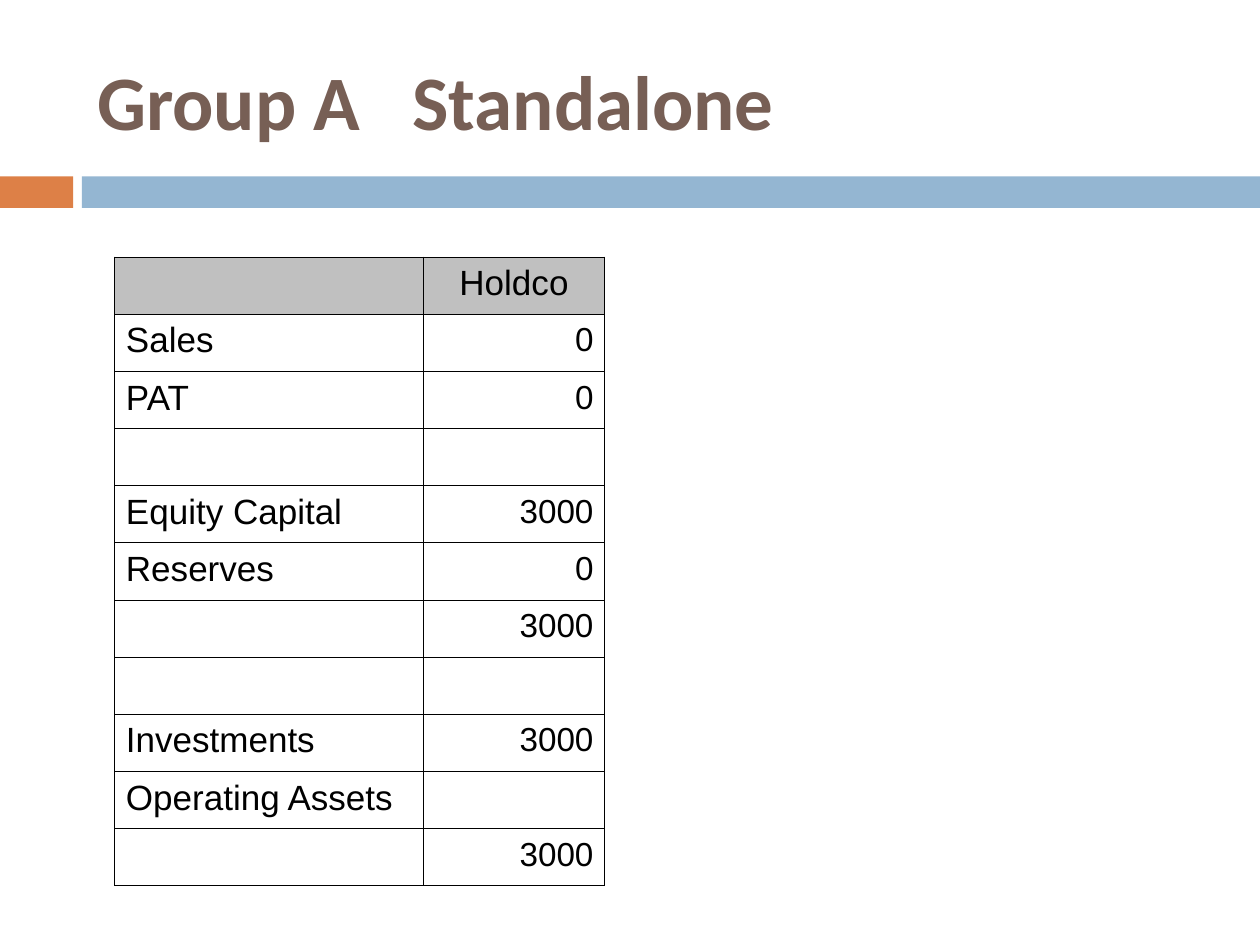
from dataclasses import dataclass

from lxml.etree import SubElement
from pptx import Presentation
from pptx.dml.color import RGBColor as RGB
from pptx.enum.shapes import MSO_SHAPE as Shape
from pptx.enum.text import MSO_ANCHOR as Anchor, MSO_AUTO_SIZE as AutoSize, PP_ALIGN as Align
from pptx.oxml.ns import qn
from pptx.util import Inches, Pt


@dataclass(frozen=True)
class Theme:
    title_font: str = "Calibri"
    table_font: str = "Arial"
    title_size: int = 44
    label_size: int = 20
    figure_size: int = 19
    title: str = "775F55"
    accent: str = "DD8047"
    band: str = "94B6D2"
    header: str = "C0C0C0"
    ink: str = "000000"
    rule: float = 0.57


THEME = Theme()
SLIDE_WIDTH, SLIDE_HEIGHT = 10, 7.5
BAND_TOP, BAND_HEIGHT = 1.4, 0.25
ACCENT_WIDTH, BAND_LEFT = 0.58, 0.65
TABLE_LEFT, TABLE_TOP = 0.91, 2.04
COLUMN_WIDTHS = (2.45, 1.44)
ROW_HEIGHT = 4.99 / 11

ACCOUNTS = [
    ("", "Holdco"),
    ("Sales", "0"),
    ("PAT", "0"),
    ("", ""),
    ("Equity Capital", "3000"),
    ("Reserves", "0"),
    ("", "3000"),
    ("", ""),
    ("Investments", "3000"),
    ("Operating Assets", ""),
    ("", "3000"),
]


def add_run(paragraph, text, font_name, size, color, bold=False):
    run = paragraph.add_run()
    run.text = text
    run.font.name = font_name
    run.font.size = Pt(size)
    run.font.bold = bold
    run.font.color.rgb = RGB.from_string(color)


def add_band(slide, left, width, color):
    band = slide.shapes.add_shape(
        Shape.RECTANGLE, Inches(left), Inches(BAND_TOP), Inches(width), Inches(BAND_HEIGHT))
    band.shadow.inherit = False
    band.fill.solid()
    band.fill.fore_color.rgb = RGB.from_string(color)
    band.line.fill.background()


def set_title(slide, text):
    title = slide.shapes.title
    title.left, title.top, title.width, title.height = map(Inches, (0.67, 0.25, 8.92, 1.08))
    frame = title.text_frame
    frame.auto_size = AutoSize.NONE
    frame.vertical_anchor = Anchor.MIDDLE
    heading = frame.paragraphs[0]
    heading.alignment = Align.LEFT
    add_run(heading, text, THEME.title_font, THEME.title_size, THEME.title, bold=True)


def add_borders(cell):
    """Rule all four sides; must come before the cell's fill in the XML."""
    properties = cell._tc.get_or_add_tcPr()
    for side in ("a:lnL", "a:lnR", "a:lnT", "a:lnB"):
        line = SubElement(properties, qn(side), w=str(Pt(THEME.rule)))
        fill = SubElement(line, qn("a:solidFill"))
        SubElement(fill, qn("a:srgbClr"), val=THEME.ink)


def fill_cell(cell, text, is_header, is_figure):
    add_borders(cell)
    if is_header:
        cell.fill.solid()
        cell.fill.fore_color.rgb = RGB.from_string(THEME.header)
    else:
        cell.fill.background()
    if not text:
        return
    cell.vertical_anchor = Anchor.MIDDLE
    cell.margin_left = cell.margin_right = Inches(0.09)
    cell.margin_top = Inches(0.06 if is_figure else 0.07)
    cell.margin_bottom = Inches(0.05)
    entry = cell.text_frame.paragraphs[0]
    entry.alignment = Align.CENTER if is_header else Align.RIGHT if is_figure else Align.LEFT
    entry.line_spacing = 0.76
    entry.space_after = Pt(14.2)
    size = THEME.figure_size if is_figure else THEME.label_size
    add_run(entry, text, THEME.table_font, size, THEME.ink)


def add_accounts(slide, accounts):
    table = slide.shapes.add_table(
        len(accounts), len(COLUMN_WIDTHS), Inches(TABLE_LEFT), Inches(TABLE_TOP),
        Inches(sum(COLUMN_WIDTHS)), Inches(ROW_HEIGHT * len(accounts))).table
    table.first_row = table.horz_banding = False
    for column, width in zip(table.columns, COLUMN_WIDTHS):
        column.width = Inches(width)
    for r, account in enumerate(accounts):
        table.rows[r].height = Inches(ROW_HEIGHT)
        for c, text in enumerate(account):
            fill_cell(table.cell(r, c), text, is_header=r == 0, is_figure=r > 0 and c > 0)


def main():
    deck = Presentation()
    deck.slide_width, deck.slide_height = Inches(SLIDE_WIDTH), Inches(SLIDE_HEIGHT)
    slide = deck.slides.add_slide(deck.slide_layouts.get_by_name("Title Only"))
    add_band(slide, 0, ACCENT_WIDTH, THEME.accent)
    add_band(slide, BAND_LEFT, SLIDE_WIDTH - BAND_LEFT, THEME.band)
    set_title(slide, "Group A   Standalone")
    add_accounts(slide, ACCOUNTS)
    deck.save("out.pptx")


if __name__ == "__main__":
    main()
